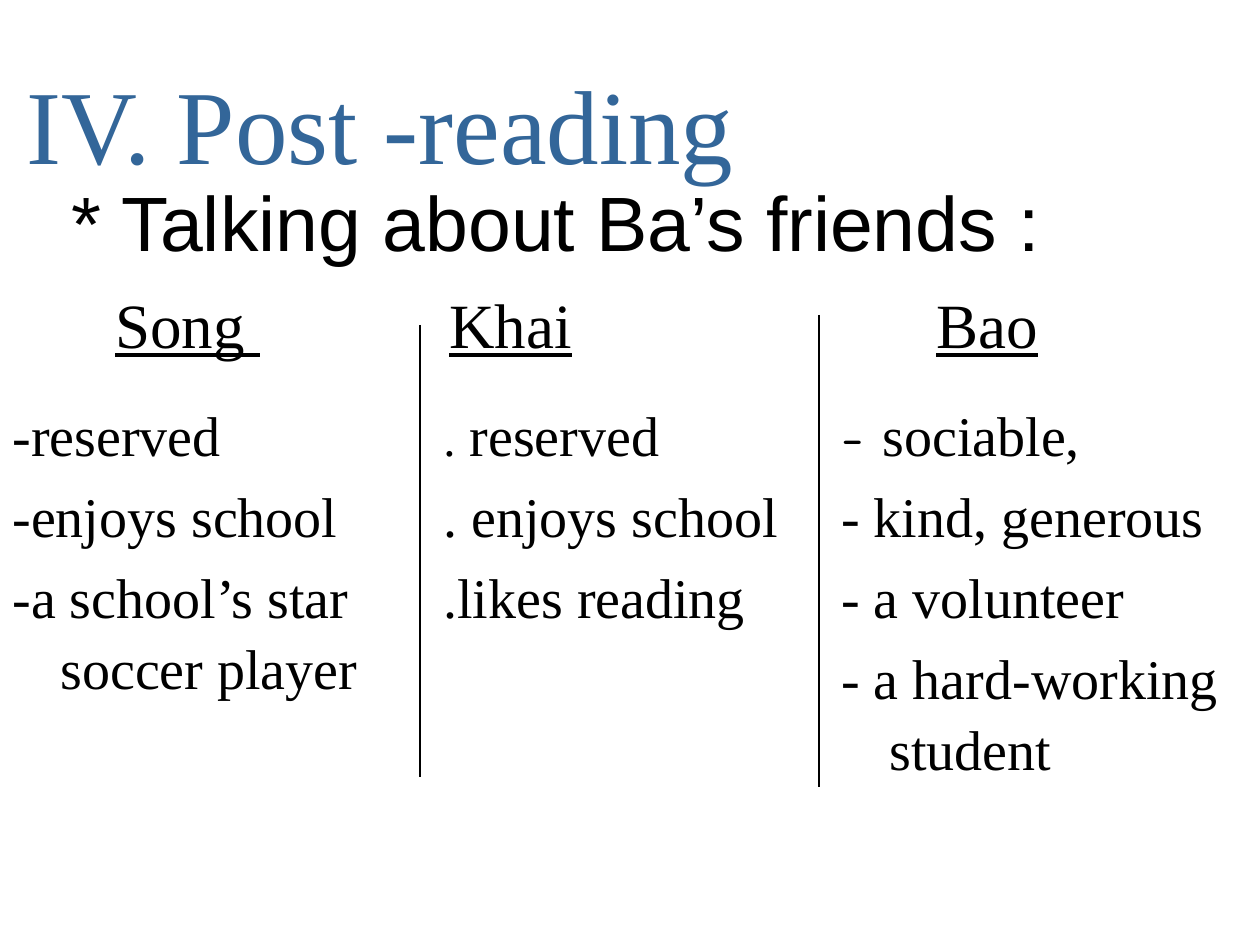
from lxml import etree
from pptx import Presentation, util as u
from pptx.dml.color import RGBColor
from pptx.enum import shapes, text
from pptx.oxml import ns

PX = 914400 // 126
SERIF = "Times New Roman"
BLACK = "000000"


def px(length):
    return u.Emu(length * PX)


def colour(value):
    return RGBColor.from_string(value)


def write(paragraph, words, size=32, font=SERIF, fill=BLACK, underline=False):
    run = paragraph.add_run()
    run.text = words
    run.font.size = u.Pt(size)
    run.font.name = font
    run.font.color.rgb = colour(fill)
    run.font.underline = underline


class Page:
    indent = 48
    spacing = 1.05
    gap = 6

    def __init__(self, deck):
        self.slide = deck.slides.add_slide(deck.slide_layouts[5])

    def frame(self, shape, anchor, wrap=True):
        frame = shape.text_frame
        frame.word_wrap = wrap
        frame.auto_size = text.MSO_AUTO_SIZE.NONE
        frame.vertical_anchor = anchor
        return frame

    def box(self, left, top, width, height, anchor=text.MSO_ANCHOR.TOP, wrap=True):
        shape = self.slide.shapes.add_textbox(px(left), px(top), px(width), px(height))
        return self.frame(shape, anchor, wrap)

    def title(self, words, left, top, width, height):
        shape = self.slide.shapes.title
        shape.left, shape.top = px(left), px(top)
        shape.width, shape.height = px(width), px(height)
        paragraph = self.frame(shape, text.MSO_ANCHOR.BOTTOM).paragraphs[0]
        paragraph.alignment = text.PP_ALIGN.CENTER
        write(paragraph, words, size=44, font="Arial")

    def section(self, words, left, top, width, height):
        paragraph = self.box(left, top, width, height, wrap=False).paragraphs[0]
        paragraph.alignment = text.PP_ALIGN.CENTER
        write(paragraph, words, size=60, fill="336699")

    def names(self, stops, left, top, width, height):
        paragraph = self.box(left, top, width, height, text.MSO_ANCHOR.BOTTOM).paragraphs[0]
        tabs = etree.SubElement(paragraph._p.get_or_add_pPr(), ns.qn("a:tabLst"))
        for name, stop in stops:
            etree.SubElement(tabs, ns.qn("a:tab"), pos=str(px(stop)), algn="l")
            write(paragraph, "\t", size=36)
            write(paragraph, name, size=36, underline=True)

    def traits(self, items, left, top, width, height):
        frame = self.box(left, top, width, height)
        for index, runs in enumerate(items):
            paragraph = frame.add_paragraph() if index else frame.paragraphs[0]
            properties = paragraph._p.get_or_add_pPr()
            properties.set("marL", str(px(self.indent)))
            properties.set("indent", str(-px(self.indent)))
            paragraph.line_spacing = self.spacing
            paragraph.space_before = u.Pt(self.gap if index else 0)
            for words, style in runs:
                write(paragraph, words, **style)

    def divider(self, x, top, bottom):
        line = self.slide.shapes.add_connector(
            shapes.MSO_CONNECTOR.STRAIGHT, px(x), px(top), px(x), px(bottom))
        line.line.color.rgb = colour(BLACK)
        line.line.width = u.Pt(0.75)
        etree.SubElement(line._element.spPr, ns.qn("a:effectLst"))


def main():
    deck = Presentation()
    deck.slide_width, deck.slide_height = u.Inches(10), u.Inches(7.5)
    page = Page(deck)
    page.title("* Talking about Ba’s friends :", 0, 179, 1113, 94)
    page.section("IV. Post -reading ", 21, 53, 745, 118)
    page.names([("Song ", 61), ("Khai", 395), ("Bao", 882)], 42, 273, 1071, 94)

    song = [
        [("-reserved", {})],
        [("-enjoys school", {})],
        [("-a school’s star soccer player", {})],
    ]
    khai = [
        [(".", {"size": 28}), (" reserved", {})],
        [(". enjoys school", {})],
        [(".likes reading", {})],
    ]
    bao = [
        [("- ", {"font": "Comic Neue"}), ("sociable,", {})],
        [("- kind, generous", {})],
        [("- a volunteer", {})],
        [("- a hard-working student", {})],
    ]
    columns = [(song, 0, 388, 357), (khai, 431, 377, 336), (bao, 829, 431, 368)]
    for friend, left, width, height in columns:
        page.traits(friend, left, 391, width, height)

    for x, top, bottom in [(420, 325, 777), (819, 315, 787)]:
        page.divider(x, top, bottom)
    deck.save("out.pptx")


if __name__ == "__main__":
    main()
